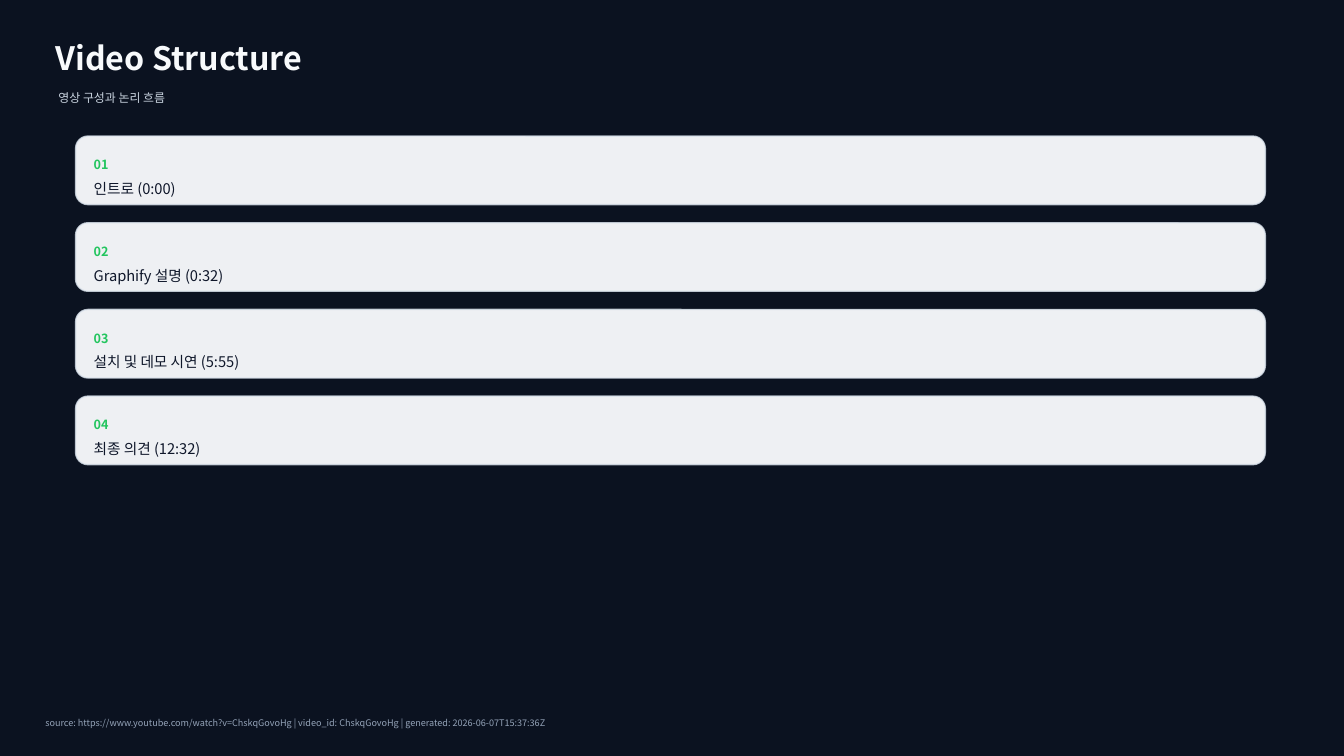
from lxml import etree
from pptx import Presentation
from pptx.dml.color import RGBColor
from pptx.enum import shapes, text
from pptx.oxml.ns import qn
from pptx.util import Inches, Pt

FONT = "Noto Sans CJK KR"
NAVY = RGBColor(0x0B, 0x12, 0x20)
WHITE = RGBColor(0xF8, 0xFA, 0xFC)
BORDER = RGBColor(0xD7, 0xE0, 0xEA)
SILVER = RGBColor(0xCB, 0xD5, 0xE1)
GREEN = RGBColor(0x22, 0xC5, 0x5E)
INK = RGBColor(0x0F, 0x17, 0x2A)
GRAY = RGBColor(0x94, 0xA3, 0xB8)

CHAPTERS = [
    "인트로 (0:00)",
    "Graphify 설명 (0:32)",
    "설치 및 데모 시연 (5:55)",
    "최종 의견 (12:32)",
]
SOURCE = (
    "source: https://www.youtube.com/watch?v=ChskqGovoHg | "
    "video_id: ChskqGovoHg | generated: 2026-06-07T15:37:36Z"
)


def add_label(s, x, y, w, h, words, size, color, bold=False):
    tf = s.shapes.add_textbox(Inches(x), Inches(y), Inches(w), Inches(h)).text_frame
    tf.word_wrap = True
    tf.vertical_anchor = text.MSO_ANCHOR.MIDDLE
    tf.margin_left = tf.margin_right = tf.margin_top = tf.margin_bottom = 0
    p = tf.paragraphs[0]
    p.text = words
    p.font.name = FONT
    p.font.size = Pt(size)
    p.font.bold = bold
    p.font.color.rgb = color
    props = p._p.pPr.find(qn("a:defRPr"))
    etree.SubElement(props, qn("a:ea")).set("typeface", FONT)


def set_opacity(sp, tag, percent):
    for color in sp._element.spPr.findall(f"{tag}/{qn('a:srgbClr')}"):
        etree.SubElement(color, qn("a:alpha")).set("val", str(percent * 1000))


def add_header(s, x, y, w):
    add_label(s, x, y, w, 0.45, "Video Structure", 23, WHITE, True)
    add_label(s, x + 0.03, y + 0.48, w - 0.5, 0.28, "영상 구성과 논리 흐름", 8.5, SILVER)


def add_card(s, x, y, w, h, number, title):
    sp = s.shapes.add_shape(
        shapes.MSO_SHAPE.ROUNDED_RECTANGLE, Inches(x), Inches(y), Inches(w), Inches(h)
    )
    sp.adjustments[0] = 0.18
    sp.shadow.inherit = False
    sp.fill.solid()
    sp.fill.fore_color.rgb = WHITE
    sp.line.color.rgb = BORDER
    sp.line.width = Pt(1)
    set_opacity(sp, qn("a:solidFill"), 96)
    set_opacity(sp, f"{qn('a:ln')}/{qn('a:solidFill')}", 80)
    pad = 0.18
    add_label(s, x + pad, y + 0.16, w - 2 * pad, 0.25, f"{number:02}", 9, GREEN, True)
    add_label(s, x + pad, y + 0.5, w - 2 * pad, 0.04, title, 10.5, INK)


def add_chapters(s, x, y, w, card_h=0.68, gap=0.18):
    for i, title in enumerate(CHAPTERS):
        add_card(s, x, y + i * (card_h + gap), w, card_h, i + 1, title)


def add_footer(s, x, y, w, h):
    add_label(s, x, y, w, h, SOURCE, 6.5, GRAY)


def main():
    prs = Presentation()
    prs.slide_width, prs.slide_height = Inches(13.33), Inches(7.5)
    s = prs.slides.add_slide(prs.slide_layouts[6])
    s.background.fill.solid()
    s.background.fill.fore_color.rgb = NAVY
    add_header(s, 0.55, 0.35, 12)
    add_chapters(s, 0.75, 1.35, 11.8)
    add_footer(s, 0.45, 7.05, 12.4, 0.25)
    prs.save("out.pptx")


if __name__ == "__main__":
    main()
